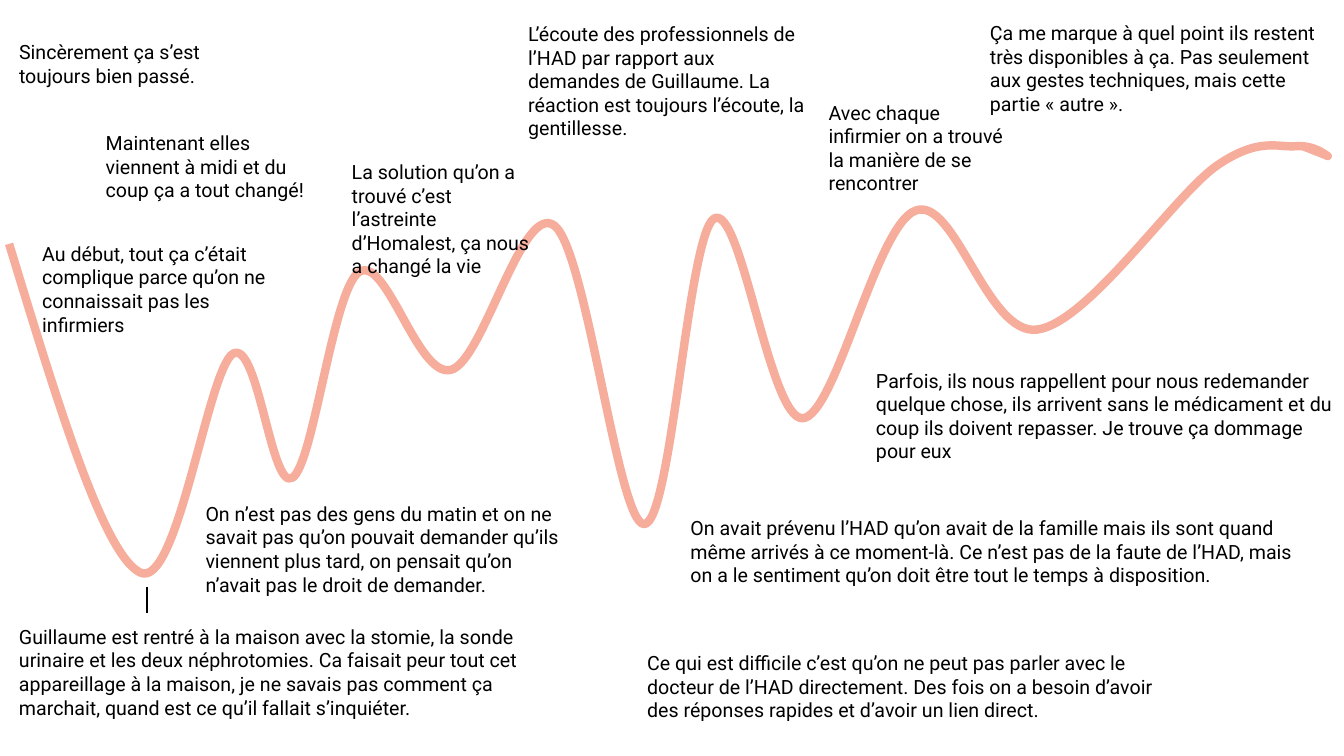
from pptx import Presentation
from pptx.dml.color import RGBColor
from pptx.enum.shapes import MSO_CONNECTOR as Conn
from pptx.enum.text import MSO_AUTO_SIZE as Auto
from pptx.oxml.ns import qn
from pptx.util import Inches, Pt
from lxml.etree import SubElement

INK, CORAL = "000000", "F6AD9C"
FONT = "Roboto"
UNIT = 1000

START = (0.09, 2.42)
BENDS = [
    ((0.56, 3.96), (1.02, 5.5), (1.39, 5.68)),
    ((1.76, 5.86), (2.06, 3.67), (2.31, 3.51)),
    ((2.56, 3.36), (2.69, 4.88), (2.9, 4.74)),
    ((3.11, 4.61), (3.3, 2.88), (3.56, 2.7)),
    ((3.83, 2.52), (4.14, 3.75), (4.47, 3.67)),
    ((4.79, 3.6), (5.18, 1.99), (5.5, 2.24)),
    ((5.82, 2.49), (6.13, 5.21), (6.39, 5.2)),
    ((6.66, 5.19), (6.82, 2.35), (7.08, 2.17)),
    ((7.35, 2), (7.63, 4.16), (7.96, 4.15)),
    ((8.29, 4.13), (8.69, 2.23), (9.08, 2.09)),
    ((9.47, 1.94), (9.79, 3.34), (10.29, 3.27)),
    ((10.79, 3.2), (11.63, 1.96), (12.06, 1.65)),
    ((12.49, 1.35), (12.68, 1.47), (12.86, 1.45)),
    ((13.05, 1.44), (13.16, 1.55), (13.17, 1.55)),
    ((13.18, 1.55), (12.92, 1.45), (12.92, 1.45)),
]

QUOTES = [
    ((0.09, 6.15, 5.36, 1.04),
     "Guillaume est rentré à la maison avec la stomie, la sonde urinaire et les deux "
     "néphrotomies. Ca faisait peur tout cet appareillage à la maison, je ne savais pas "
     "comment ça marchait, quand est ce qu’il fallait s’inquiéter."),
    ((1.94, 4.93, 3.83, 1.04),
     "On n’est pas des gens du matin et on ne savait pas qu’on pouvait demander qu’ils "
     "viennent plus tard, on pensait qu’on n’avait pas le droit de demander."),
    ((0.09, 0.35, 2.55, 0.57), "Sincèrement ça s’est toujours bien passé."),
    ((0.95, 1.25, 2.29, 0.81),
     "Maintenant elles viennent à midi et du coup ça a tout changé!"),
    ((0.32, 2.35, 2.59, 0.81),
     "Au début, tout ça c’était complique parce qu’on ne connaissait pas les infirmiers"),
    ((6.32, 6.41, 5.23, 0.81),
     "Ce qui est difficile c’est qu’on ne peut pas parler avec le docteur de l’HAD "
     "directement. Des fois on a besoin d’avoir des réponses rapides et d’avoir un lien "
     "direct."),
    ((3.39, 1.54, 2.05, 1.04),
     "La solution qu’on a trouvé c’est l’astreinte d’Homalest, ça nous a changé la vie"),
    ((6.75, 5.07, 6.43, 0.81),
     "On avait prévenu l’HAD qu’on avait de la famille mais ils sont quand même arrivés à "
     "ce moment-là. Ce n’est pas de la faute de l’HAD, mais on a le sentiment qu’on doit "
     "être tout le temps à disposition."),
    ((8.59, 3.61, 4.74, 1.04),
     "Parfois, ils nous rappellent pour nous redemander quelque chose, ils arrivent sans "
     "le médicament et du coup ils doivent repasser. Je trouve ça dommage pour eux"),
    ((5.14, 0.17, 2.98, 1.04),
     "L’écoute des professionnels de l’HAD par rapport aux demandes de Guillaume. La "
     "réaction est toujours l’écoute, la gentillesse."),
    ((8.12, 0.95, 2, 1.04),
     "Avec chaque infirmier on a trouvé la manière de se rencontrer"),
    ((9.72, 0.16, 3.61, 0.81),
     "Ça me marque à quel point ils restent très disponibles à ça. Pas seulement aux "
     "gestes techniques, mais cette partie « autre »."),
]


def color(code):
    """Turn a hex string into a colour."""
    return RGBColor.from_string(code)


def bend(shape, left, top, bends):
    """Turn the straight segments of a freeform into cubic curves."""
    lines = list(shape._element.iter(qn("a:lnTo")))
    for line, points in zip(lines, bends):
        line.tag = qn("a:cubicBezTo")
        for old in list(line):
            line.remove(old)
        for x, y in points:
            SubElement(line, qn("a:pt"), x=str(round((x - left) * UNIT)),
                       y=str(round((y - top) * UNIT)))


def add_mood(slide, start, bends):
    """Draw the mood curve through its highs and lows."""
    stops = [start] + [points[-1] for points in bends]
    left, top = (min(axis) for axis in zip(*stops))
    knots = [(round(x * UNIT), round(y * UNIT)) for x, y in stops]
    pen = slide.shapes.build_freeform(*knots[0], scale=Inches(1) / UNIT)
    pen.add_line_segments(knots[1:], close=False)
    curve = pen.convert_to_shape()
    bend(curve, left, top, bends)
    curve.shadow.inherit = False
    curve.fill.background()
    curve.line.color.rgb = color(CORAL)
    curve.line.width = Pt(6)


def add_quote(slide, box, words):
    """Place one quote in its box."""
    frame = slide.shapes.add_textbox(*map(Inches, box)).text_frame
    frame.word_wrap = True
    frame.auto_size = Auto.SHAPE_TO_FIT_TEXT
    para = frame.paragraphs[0]
    para.text = words
    para.font.name = FONT
    para.font.size = Pt(14)
    para.font.color.rgb = color(INK)


def add_tick(slide, x, low, high):
    """Link the first low to its quote with a short upright line."""
    tick = slide.shapes.add_connector(Conn.STRAIGHT, *map(Inches, (x, low, x, high)))
    tick.line.color.rgb = color(INK)
    tick.line.width = Pt(1.5)
    SubElement(tick._element.spPr, qn("a:effectLst"))


def main():
    """Build and save the slide."""
    deck = Presentation()
    deck.slide_width, deck.slide_height = Inches(13.33), Inches(7.5)
    slide = deck.slides.add_slide(deck.slide_layouts[6])
    add_mood(slide, START, BENDS)
    for box, words in QUOTES:
        add_quote(slide, box, words)
    add_tick(slide, 1.46, 6.08, 5.82)
    deck.save("out.pptx")


if __name__ == "__main__":
    main()
